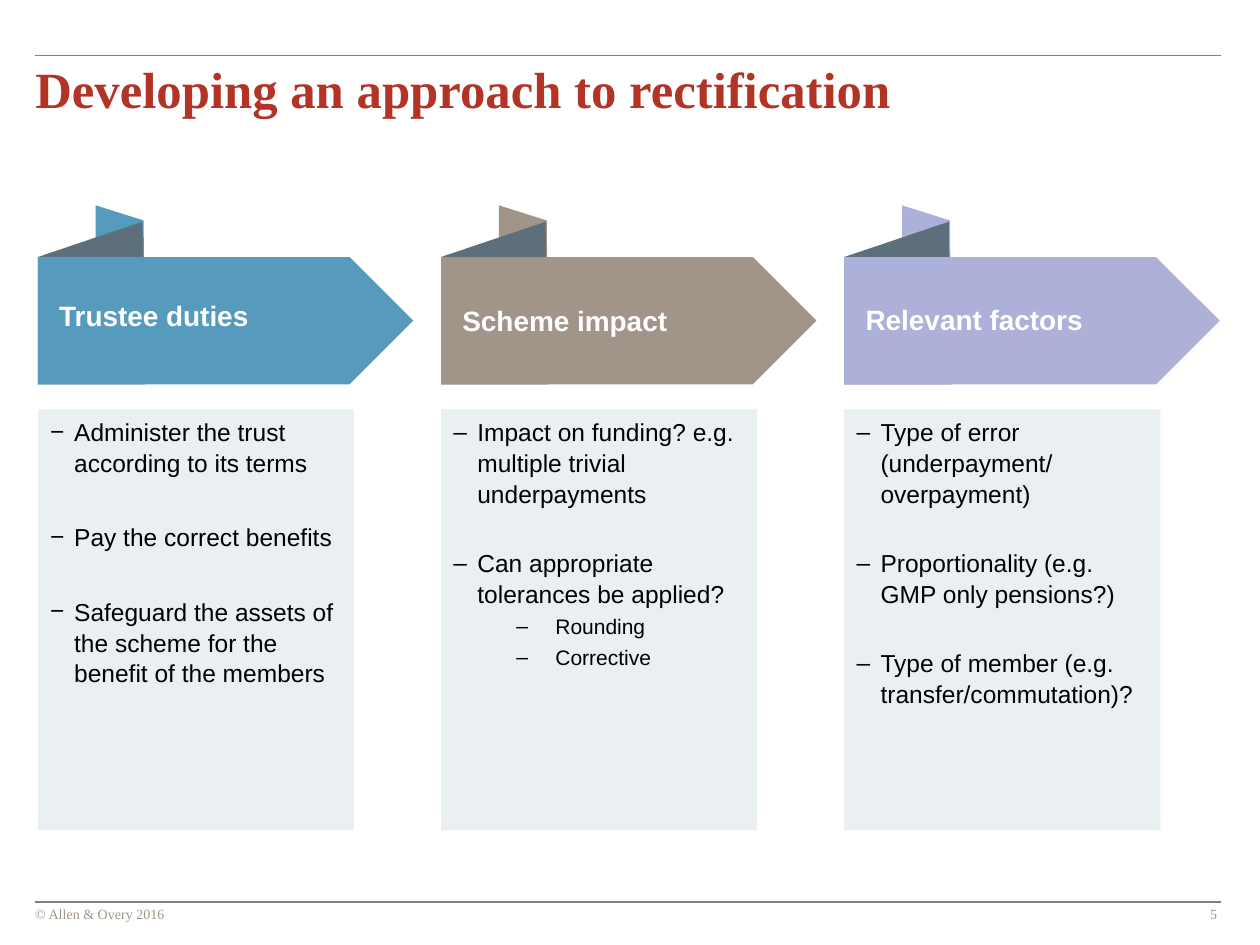
from lxml import etree
from pptx import Presentation
from pptx.dml.color import RGBColor
from pptx.enum.shapes import MSO_CONNECTOR, MSO_SHAPE
from pptx.enum.text import MSO_ANCHOR, PP_ALIGN
from pptx.oxml.ns import qn
from pptx.util import Inches, Pt

PENTAGON, RECTANGLE = MSO_SHAPE.PENTAGON, MSO_SHAPE.RECTANGLE
STRAIGHT = MSO_CONNECTOR.STRAIGHT
TOP = MSO_ANCHOR.TOP
LEFT, RIGHT = PP_ALIGN.LEFT, PP_ALIGN.RIGHT

SERIF, SANS = "Times New Roman", "Arial"
RED, TAUPE, SLATE, PALE = "B23427", "A19589", "5C6F7B", "EAEFF1"
GREY, WHITE, BLACK = "808080", "FFFFFF", "000000"

TITLE = "Developing an approach to rectification"
FOOTER, PAGE_NUMBER = "© Allen & Overy 2016", "5"

# Bullets are (level, text); gap is the space in points between main bullets.
COLUMNS = [
    {"heading": "Trustee duties", "heading_top": 2.37, "color": "569BBE",
     "bullet": "−", "gap": 24.9,
     "items": [(0, "Administer the trust according to its terms"),
               (0, "Pay the correct benefits"),
               (0, "Safeguard the assets of the scheme for the benefit of the members")]},
    {"heading": "Scheme impact", "heading_top": 2.41, "color": TAUPE,
     "bullet": "–", "gap": 22,
     "items": [(0, "Impact on funding? e.g. multiple trivial underpayments"),
               (0, "Can appropriate tolerances be applied?"),
               (1, "Rounding"),
               (1, "Corrective")]},
    {"heading": "Relevant factors", "heading_top": 2.4, "color": "ADB0D8",
     "bullet": "–", "gap": 22,
     "items": [(0, "Type of error (underpayment/ overpayment)"),
               (0, "Proportionality (e.g. GMP only pensions?)"),
               (0, "Type of member (e.g. transfer/commutation)?")]},
]
# Per level: text size, left margin, hanging indent
LEVELS = [(14, 0.19, 0.19), (12, 0.81, 0.31)]

COLUMN_LEFT, COLUMN_PITCH = 0.3, 3.2
ARROW_TOP, ARROW_WIDTH, ARROW_HEIGHT = 2.04, 2.98, 1.01
PANEL_TOP, PANEL_WIDTH, PANEL_HEIGHT = 3.25, 2.51, 3.34
# Ribbon outlines, x measured from the column's left edge
RIBBON_BACK = [(0.46, 1.63), (0.84, 1.75), (0.85, 2.98), (0.46, 2.98)]
RIBBON_FOLD = [(0, 2.04), (0.83, 1.76), (0.85, 3.05), (0, 3.05)]


def rgb(color):
    return RGBColor.from_string(color)


def paint(shape, color):
    shape.shadow.inherit = False
    shape.fill.solid()
    shape.fill.fore_color.rgb = rgb(color)
    shape.line.fill.background()


def add_run(paragraph, text, size, font, color, bold=False):
    run = paragraph.add_run()
    run.text = text
    run.font.size = Pt(size)
    run.font.name = font
    run.font.bold = bold
    run.font.color.rgb = rgb(color)


def prepare_frame(frame):
    """Wrap text from the top, with no margins."""
    frame.word_wrap = True
    frame.vertical_anchor = TOP
    frame.margin_left = frame.margin_right = 0
    frame.margin_top = frame.margin_bottom = 0


def add_label(slide, box, text, *style, align=LEFT):
    frame = slide.shapes.add_textbox(*map(Inches, box)).text_frame
    prepare_frame(frame)
    paragraph = frame.paragraphs[0]
    paragraph.alignment = align
    add_run(paragraph, text, *style)


def add_rule(slide, top):
    line = slide.shapes.add_connector(
        STRAIGHT, Inches(0.28), Inches(top), Inches(9.69), Inches(top))
    line.line.color.rgb = rgb(GREY)
    line.line.width = Pt(1)
    etree.SubElement(line._element.spPr, qn("a:effectLst"))


def add_outline(slide, left, points, color):
    corners = [(Inches(left + x), Inches(y)) for x, y in points]
    builder = slide.shapes.build_freeform(*corners[0])
    builder.add_line_segments(corners[1:], close=True)
    paint(builder.convert_to_shape(), color)


def add_block(slide, kind, box, color):
    shape = slide.shapes.add_shape(kind, *map(Inches, box))
    paint(shape, color)
    return shape


def set_bullet(paragraph, character, margin, hanging):
    properties = paragraph._p.get_or_add_pPr()
    properties.set("marL", str(Inches(margin)))
    properties.set("indent", str(-Inches(hanging)))
    etree.SubElement(properties, qn("a:buFont"), typeface=SANS)
    etree.SubElement(properties, qn("a:buChar"), char=character)


def fill_panel(panel, column):
    frame = panel.text_frame
    frame.word_wrap = True
    frame.vertical_anchor = TOP
    for index, (level, text) in enumerate(column["items"]):
        paragraph = frame.add_paragraph() if index else frame.paragraphs[0]
        size, margin, hanging = LEVELS[level]
        paragraph.level = level
        paragraph.alignment = LEFT
        set_bullet(paragraph, column["bullet"], margin, hanging)
        paragraph.line_spacing = 1.05
        if index:
            paragraph.space_before = Pt(2.4 if level else column["gap"])
        add_run(paragraph, text, size, SANS, BLACK)


def add_column(slide, left, column):
    color = column["color"]
    add_outline(slide, left, RIBBON_BACK, color)
    add_outline(slide, left, RIBBON_FOLD, SLATE)
    add_block(slide, PENTAGON, (left, ARROW_TOP, ARROW_WIDTH, ARROW_HEIGHT), color)
    add_label(slide, (left + 0.17, column["heading_top"], 2.16, 0.27),
              column["heading"], 16, SANS, WHITE, True)
    panel = add_block(slide, RECTANGLE,
                      (left, PANEL_TOP, PANEL_WIDTH, PANEL_HEIGHT), PALE)
    fill_panel(panel, column)


def add_title(slide):
    title = slide.shapes.title
    title.left, title.top, title.width, title.height = map(
        Inches, (0.28, 0.46, 9.37, 0.49))
    prepare_frame(title.text_frame)
    paragraph = title.text_frame.paragraphs[0]
    paragraph.alignment = LEFT
    add_run(paragraph, TITLE, 29, SERIF, RED, True)


def main():
    presentation = Presentation()
    presentation.slide_width, presentation.slide_height = Inches(10), Inches(7.5)
    slide = presentation.slides.add_slide(presentation.slide_layouts[5])
    for top in (0.44, 7.16):
        add_rule(slide, top)
    add_label(slide, (0.28, 7.19, 7.17, 0.13), FOOTER, 8, SERIF, TAUPE)
    add_label(slide, (2.49, 7.19, 7.17, 0.13), PAGE_NUMBER, 8, SERIF, TAUPE,
              align=RIGHT)
    add_title(slide)
    for index, column in enumerate(COLUMNS):
        add_column(slide, COLUMN_LEFT + index * COLUMN_PITCH, column)
    presentation.save("out.pptx")


if __name__ == "__main__":
    main()
